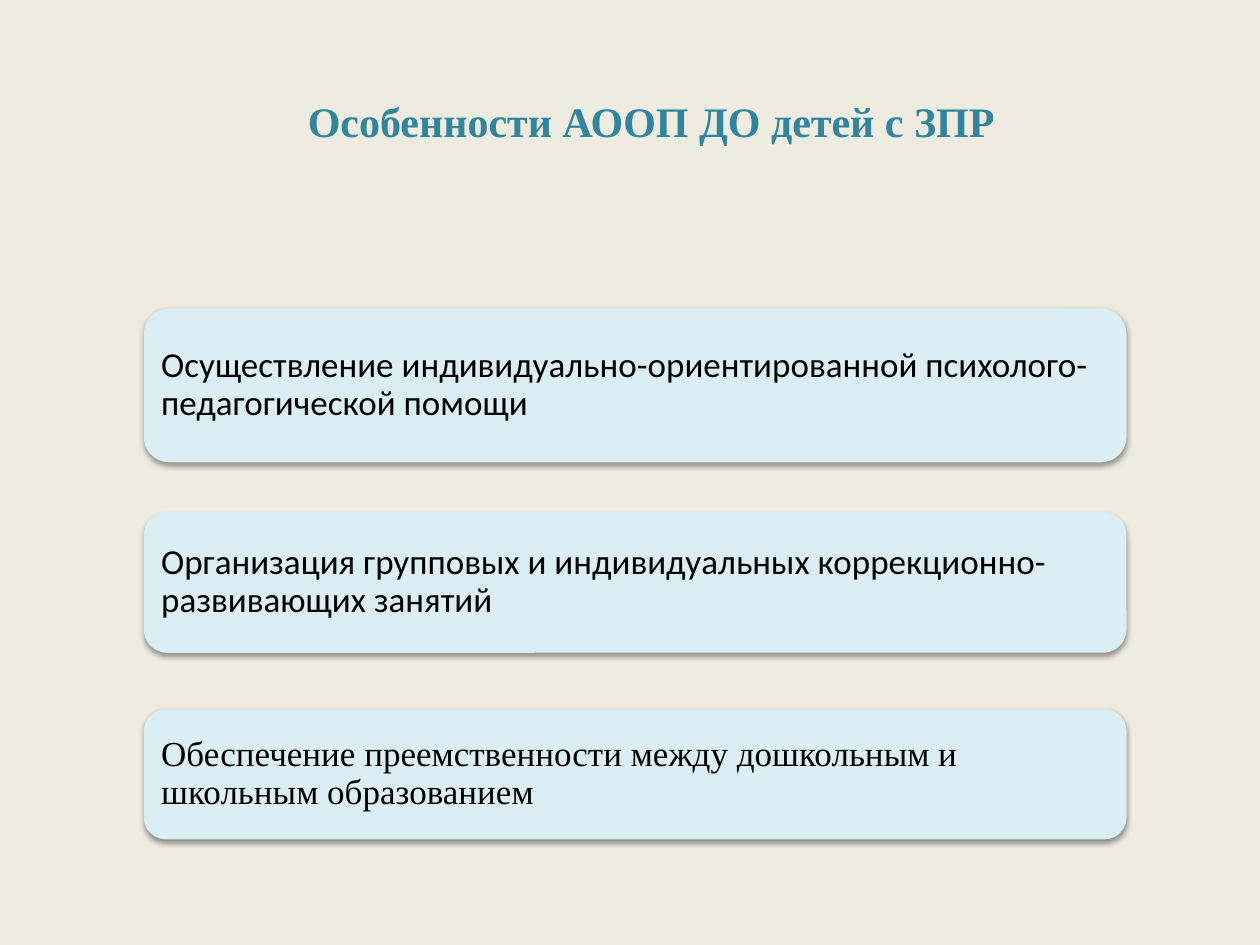
from lxml.etree import SubElement
from pptx import Presentation
from pptx.dml.color import RGBColor
from pptx.enum.shapes import MSO_SHAPE
from pptx.enum.text import MSO_ANCHOR, PP_ALIGN
from pptx.oxml.ns import qn
from pptx.util import Cm, Pt

SAND = RGBColor(0xEE, 0xEC, 0xE1)
TEAL = RGBColor(0x31, 0x85, 0x9C)
ICE = RGBColor(0xDB, 0xEE, 0xF4)
BLACK = RGBColor(0, 0, 0)
SERIF = "Times New Roman"
SANS = "Calibri"


def write(frame, text, *, font, size, color, bold=False,
          align=PP_ALIGN.LEFT, lines=1.0):
    frame.word_wrap = True
    frame.vertical_anchor = MSO_ANCHOR.MIDDLE
    para = frame.paragraphs[0]
    para.alignment = align
    para.line_spacing = lines
    run = para.add_run()
    run.text = text
    run.font.name = font
    run.font.size = Pt(size)
    run.font.bold = bold
    run.font.color.rgb = color


class Deck:
    """Holds the style and the current slide."""

    left, width = 2.9, 19.81
    pad, inset = 0.15, 0.2

    def __init__(self):
        self.prs = Presentation()
        self.prs.slide_width = Cm(25.4)
        self.prs.slide_height = Cm(19.05)
        self.slide = self.prs.slides.add_slide(self.prs.slide_layouts[6])
        fill = self.slide.background.fill
        fill.solid()
        fill.fore_color.rgb = SAND

    def box(self, x, y, w, h):
        area = self.slide.shapes.add_textbox(Cm(x), Cm(y), Cm(w), Cm(h))
        return area.text_frame

    def title(self, text):
        write(self.box(1.7, 1.32, 22.86, 2.21), text, font=SERIF, size=24,
              color=TEAL, bold=True, align=PP_ALIGN.CENTER)

    def shade(self, shape):
        shape.shadow.inherit = False
        effects = shape._element.spPr.find(qn("a:effectLst"))
        outer = SubElement(effects, qn("a:outerShdw"), blurRad=str(Pt(3.1)),
                           dist=str(Pt(1.6)), dir="5400000", rotWithShape="0")
        color = SubElement(outer, qn("a:srgbClr"), val=str(BLACK))
        SubElement(color, qn("a:alpha"), val="38000")

    def card(self, top, height, text, font):
        panel = self.slide.shapes.add_shape(
            MSO_SHAPE.ROUNDED_RECTANGLE,
            Cm(self.left), Cm(top), Cm(self.width), Cm(height))
        panel.fill.solid()
        panel.fill.fore_color.rgb = ICE
        panel.line.fill.background()
        self.shade(panel)

        # Label inside the panel
        pad = self.pad
        frame = self.box(self.left + pad, top + pad,
                         self.width - 2 * pad, height - 2 * pad)
        frame.margin_left = frame.margin_right = Cm(self.inset)
        frame.margin_top = frame.margin_bottom = Cm(self.inset)
        write(frame, text, font=font, size=20, color=BLACK, lines=0.9)


def main():
    deck = Deck()

    # Heading
    deck.title("Особенности АООП ДО детей с ЗПР")

    # Cards: top, height, text, font
    cards = [
        (6.22, 3.1, "Осуществление индивидуально-ориентированной "
         "психолого-педагогической помощи", SANS),
        (10.32, 2.84, "Организация групповых и индивидуальных "
         "коррекционно-развивающих занятий", SANS),
        (14.3, 2.62, "Обеспечение преемственности между дошкольным "
         "и школьным образованием", SERIF),
    ]
    for card in cards:
        deck.card(*card)

    deck.prs.save("out.pptx")


if __name__ == "__main__":
    main()
